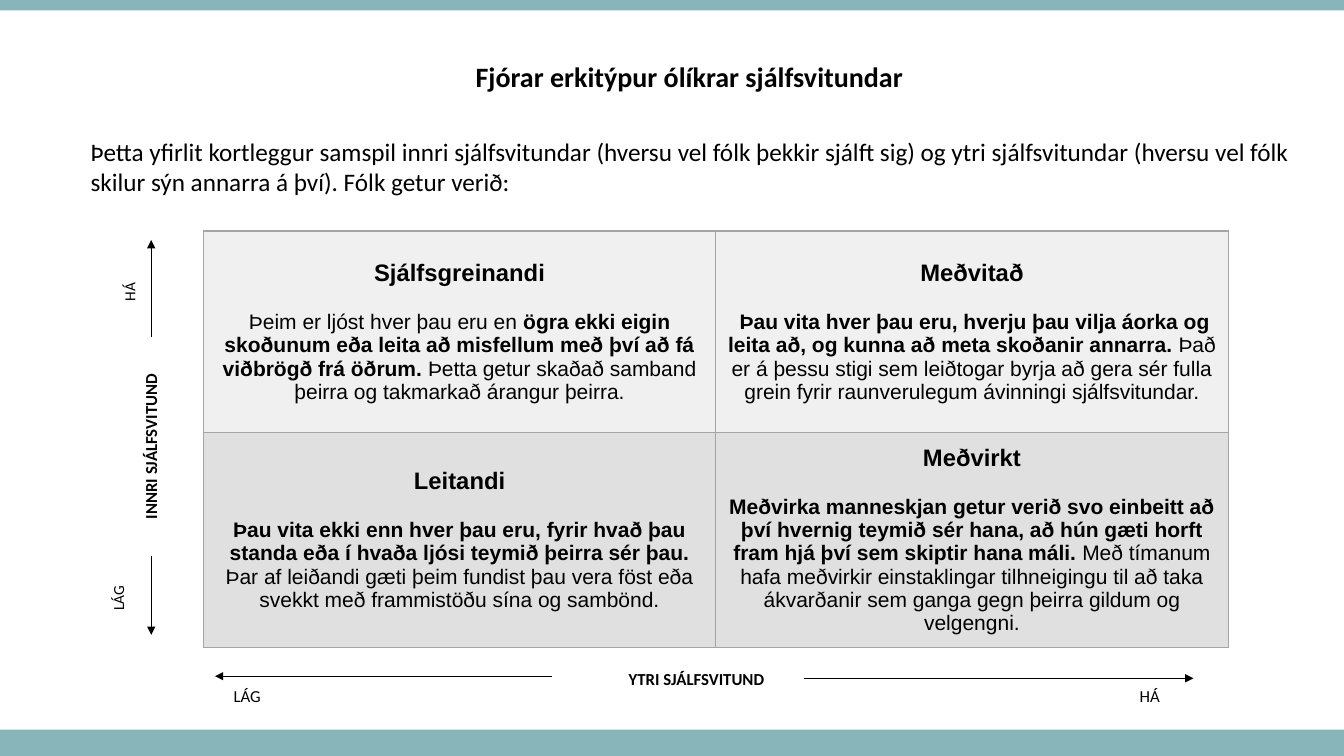
from dataclasses import dataclass

from lxml import etree
from pptx import Presentation
from pptx import util as u
from pptx.dml.color import RGBColor
from pptx.enum import shapes, text
from pptx.oxml import ns

Pt = u.Pt
LEFT, CENTER = text.PP_ALIGN.LEFT, text.PP_ALIGN.CENTER


@dataclass(frozen=True)
class Theme:
    black: str = "000000"
    band: str = "87B5BA"
    border: str = "A5A5A5"
    row_fills: tuple = ("F0F0F0", "E0E0E0")
    label_font: str = "Calibri"
    cell_font: str = "Arial"
    title: float = 20
    intro: float = 18
    heading: float = 17
    body: float = 15
    axis: float = 12
    side: float = 11


THEME = Theme()
WIDTH, HEIGHT = 960, 540

# Each quadrant: heading, then (words, bold) runs
QUADRANTS = [
    [
        ("Sjálfsgreinandi", [
            ("Þeim er ljóst hver þau eru en ", False),
            ("ögra ekki eigin skoðunum eða leita að misfellum með því að fá "
             "viðbrögð frá öðrum. ", True),
            ("Þetta getur skaðað samband þeirra og takmarkað árangur þeirra.", False)]),
        ("Meðvitað", [
            (" Þau vita hver þau eru, hverju þau vilja áorka og leita að, og kunna "
             "að meta skoðanir annarra.", True),
            (" Það er á þessu stigi sem leiðtogar byrja að gera sér fulla grein "
             "fyrir raunverulegum ávinningi sjálfsvitundar.", False)]),
    ],
    [
        ("Leitandi", [
            ("Þau vita ekki enn hver þau eru, fyrir hvað þau standa eða í hvaða "
             "ljósi teymið þeirra sér þau. ", True),
            ("Þar af leiðandi gæti þeim fundist þau vera föst eða svekkt með "
             "frammistöðu sína og sambönd.", False)]),
        ("Meðvirkt", [
            ("Meðvirka manneskjan getur verið svo einbeitt að því hvernig teymið "
             "sér hana, að hún gæti horft fram hjá því sem skiptir hana máli.", True),
            (" Með tímanum hafa meðvirkir einstaklingar tilhneigingu til að taka "
             "ákvarðanir sem ganga gegn þeirra gildum og velgengni.", False)]),
    ],
]


def rgb(color):
    return RGBColor.from_string(color)


def add_run(p, words, size, font, bold=False):
    r = p.add_run()
    r.text = words
    r.font.size, r.font.name, r.font.bold = Pt(size), font, bold
    r.font.color.rgb = rgb(THEME.black)


def add_band(s, top, height):
    sp = s.shapes.add_shape(shapes.MSO_SHAPE.RECTANGLE, 0, Pt(top), Pt(WIDTH), Pt(height))
    sp.shadow.inherit = False
    sp.fill.solid()
    sp.fill.fore_color.rgb = rgb(THEME.band)
    sp.line.fill.background()


def add_label(s, words, box, size, bold=False, align=LEFT, rotation=0):
    sp = s.shapes.add_textbox(*map(Pt, box))
    sp.rotation = rotation
    tf = sp.text_frame
    tf.word_wrap = True
    p = tf.paragraphs[0]
    p.alignment = align
    add_run(p, words, size, THEME.label_font, bold)


def add_arrow(s, x1, y1, x2, y2):
    line = s.shapes.add_connector(shapes.MSO_CONNECTOR.STRAIGHT, *map(Pt, (x1, y1, x2, y2)))
    line.line.width = Pt(0.75)
    line.line.color.rgb = rgb(THEME.black)
    etree.SubElement(line.line._get_or_add_ln(), ns.qn("a:tailEnd"), type="triangle")
    etree.SubElement(line._element.spPr, ns.qn("a:effectLst"))


def set_borders(cell, color, width):
    """Draw all four edges; they must precede the fill in the cell's XML."""
    tcPr = cell._tc.get_or_add_tcPr()
    for i, edge in enumerate(("lnL", "lnR", "lnT", "lnB")):
        ln = etree.Element(ns.qn(f"a:{edge}"), w=str(Pt(width)))
        fill = etree.SubElement(ln, ns.qn("a:solidFill"))
        etree.SubElement(fill, ns.qn("a:srgbClr"), val=color)
        tcPr.insert(i, ln)


def fill_quadrant(cell, heading, runs, color):
    cell.fill.solid()
    cell.fill.fore_color.rgb = rgb(color)
    set_borders(cell, THEME.border, 1)
    cell.vertical_anchor = text.MSO_ANCHOR.MIDDLE
    tf = cell.text_frame
    p = tf.paragraphs[0]
    p.alignment = CENTER
    p.space_after = Pt(17)
    add_run(p, heading, THEME.heading, THEME.cell_font, True)
    p = tf.add_paragraph()
    p.alignment = CENTER
    for words, bold in runs:
        add_run(p, words, THEME.body, THEME.cell_font, bold)


def add_matrix(s, left, top, col_width, row_heights):
    table = s.shapes.add_table(2, 2, Pt(left), Pt(top), Pt(2 * col_width),
                               Pt(sum(row_heights))).table
    table.first_row = table.horz_banding = False
    for i, quadrants in enumerate(QUADRANTS):
        table.rows[i].height = Pt(row_heights[i])
        for j, (heading, runs) in enumerate(quadrants):
            table.columns[j].width = Pt(col_width)
            fill_quadrant(table.cell(i, j), heading, runs, THEME.row_fills[i])


def main():
    prs = Presentation()
    prs.slide_width, prs.slide_height = Pt(WIDTH), Pt(HEIGHT)
    s = prs.slides.add_slide(prs.slide_layouts[6])

    add_band(s, 521.2, 18.8)
    add_band(s, 0, 7.5)
    add_label(s, "Fjórar erkitýpur ólíkrar sjálfsvitundar", (332.6, 39, 330, 31.5),
              THEME.title, bold=True)
    add_label(s, "Þetta yfirlit kortleggur samspil innri sjálfsvitundar (hversu vel fólk "
              "þekkir sjálft sig) og ytri sjálfsvitundar (hversu vel fólk skilur sýn "
              "annarra á því). Fólk getur verið:", (57.6, 93.6, 880, 51), THEME.intro)
    add_matrix(s, 145.3, 165, 366, (144, 153.5))

    add_label(s, "YTRI SJÁLFSVITUND", (407.5, 474.5, 180, 21.6), THEME.axis, True, CENTER)
    add_label(s, "INNRI SJÁLFSVITUND", (29.5, 308.2, 156.2, 21.6), THEME.axis, True,
              CENTER, 270)
    for ends in ((394, 483, 153.5, 483), (574.5, 484.5, 852.5, 484.5),
                 (108, 241, 108, 171.5), (108, 397.5, 108, 453.5)):
        add_arrow(s, *ends)
    add_label(s, "LÁG", (159.8, 486, 54, 21.6), THEME.axis)
    add_label(s, "HÁ", (807, 486, 45.4, 21.6), THEME.axis)
    add_label(s, "LÁG", (57.6, 406, 54, 20.9), THEME.side, rotation=270)
    add_label(s, "HÁ", (63.4, 182.9, 58.3, 20.9), THEME.side, rotation=270)
    prs.save("out.pptx")


if __name__ == "__main__":
    main()
